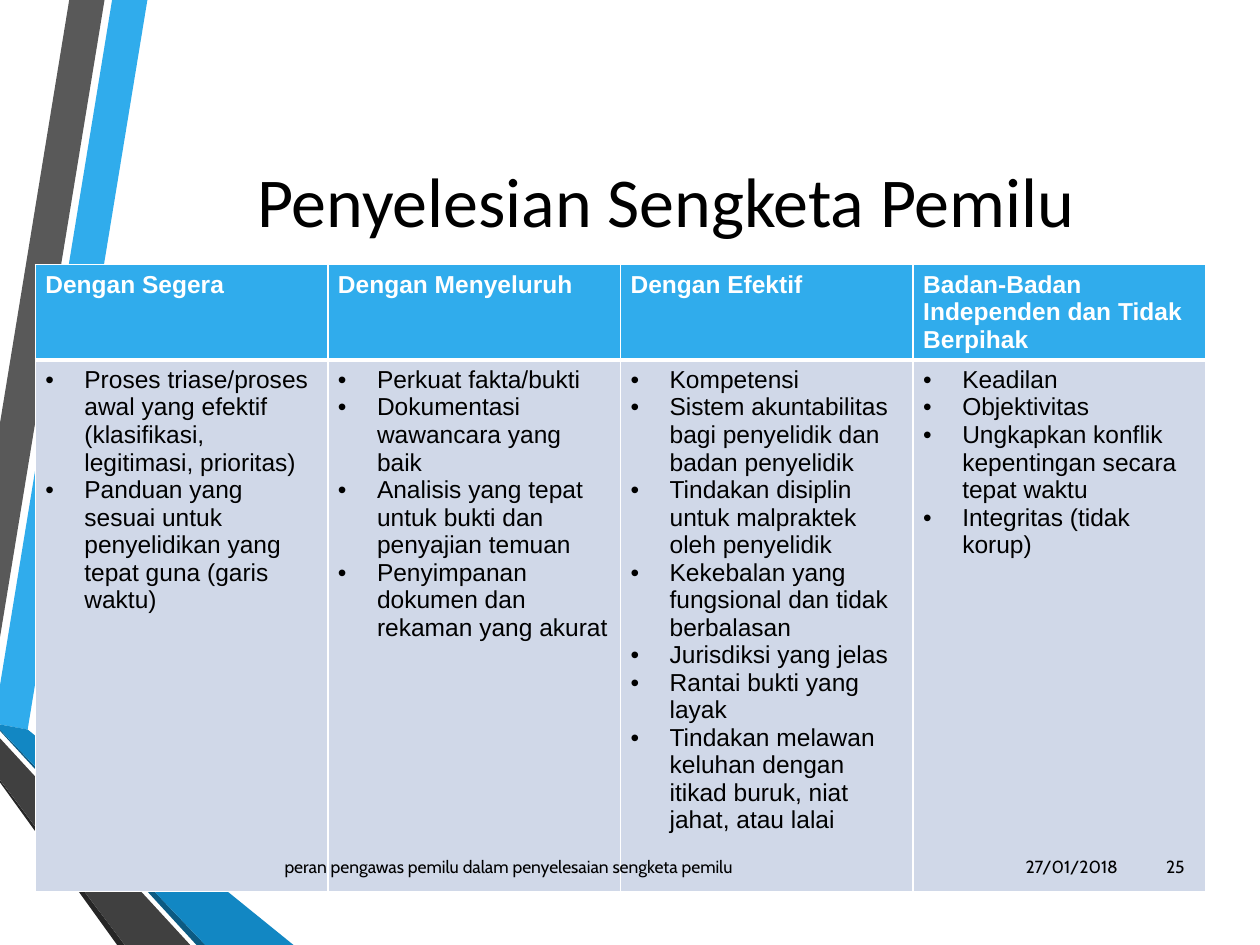
from dataclasses import dataclass

from lxml.etree import SubElement as Sub
from pptx import Presentation
from pptx.dml.color import RGBColor as Rgb
from pptx.enum.text import MSO_ANCHOR as Anchor, PP_ALIGN as Align
from pptx.oxml import parse_xml
from pptx.oxml.ns import nsdecls, qn
from pptx.util import Inches, Pt


@dataclass(frozen=True)
class Theme:
    """Colours, fonts and type sizes of the slide."""
    black: str = "000000"
    white: str = "FFFFFF"
    sky: str = "30ACEC"
    blue: str = "1287C3"
    navy: str = "0C5A82"
    gray: str = "595959"
    dark: str = "404040"
    coal: str = "262626"
    pale: str = "D0D8E8"
    head: str = "Calibri"
    body: str = "Arial"
    foot: str = "Cabin"
    big: int = 40
    mid: int = 14
    small: int = 10


THEME = Theme()

BANDS = [
    (THEME.sky, [(0, 5.44), (0, 5.75), (0.22, 5.79), (1.17, 0), (0.89, 0)]),
    (THEME.gray, [(0.83, 0), (0.55, 0), (0, 3.36), (0, 5.06)]),
    (THEME.coal, [(0, 6.19), (0, 6.21), (0.93, 7.5), (0.99, 7.5)]),
    (THEME.navy, [(0, 5.79), (0, 5.8), (1.56, 7.5), (1.63, 7.5)]),
    (THEME.blue, [(0, 5.79), (1.63, 7.5), (2.33, 7.5), (0.22, 5.79), (0, 5.75)]),
    (THEME.dark, [(0, 6.19), (0.99, 7.5), (1.51, 7.5), (0, 5.86)]),
]

COLUMNS = {
    "Dengan Segera": [
        "Proses triase/proses awal yang efektif (klasifikasi, legitimasi, prioritas)",
        "Panduan yang sesuai untuk penyelidikan yang tepat guna (garis waktu)",
    ],
    "Dengan Menyeluruh": [
        "Perkuat fakta/bukti",
        "Dokumentasi wawancara yang baik",
        "Analisis yang tepat untuk bukti dan penyajian temuan",
        "Penyimpanan dokumen dan rekaman yang akurat",
    ],
    "Dengan Efektif": [
        "Kompetensi",
        "Sistem akuntabilitas bagi penyelidik dan badan penyelidik",
        "Tindakan disiplin untuk malpraktek oleh penyelidik",
        "Kekebalan yang fungsional dan tidak berbalasan",
        "Jurisdiksi yang jelas",
        "Rantai bukti yang layak",
        "Tindakan melawan keluhan dengan itikad buruk, niat jahat, atau lalai",
    ],
    "Badan-Badan Independen dan Tidak Berpihak": [
        "Keadilan",
        "Objektivitas",
        "Ungkapkan konflik kepentingan secara tepat waktu",
        "Integritas (tidak korup)",
    ],
}

FOOTS = [
    ("27/01/2018", (8.03, 6.68, 0.94, 0.4), Align.RIGHT),
    ("peran pengawas pemilu dalam penyelesaian sengketa pemilu",
     (2.16, 6.68, 5.81, 0.4), Align.LEFT),
    ("25", (9.03, 6.68, 0.47, 0.4), Align.RIGHT),
]


def write(frame, lines, font=THEME.body, size=THEME.mid, color=THEME.black,
          bold=False, align=Align.LEFT, bullet=False):
    """Fill a text frame with one formatted paragraph per line."""
    for i, line in enumerate(lines):
        para = frame.add_paragraph() if i else frame.paragraphs[0]
        para.alignment = align
        run = para.add_run()
        run.text = line
        run.font.name, run.font.size, run.font.bold = font, Pt(size), bold
        run.font.color.rgb = Rgb.from_string(color)
        if bullet:
            props = para._p.get_or_add_pPr()
            props.set("marL", str(Inches(0.31)))
            props.set("indent", str(Inches(-0.31)))
            Sub(props, qn("a:buFont"), typeface=THEME.body)
            Sub(props, qn("a:buChar"), char="•")


class Deck:
    """Holds the style and the current slide."""

    def __init__(self, theme):
        """Open a presentation with one title slide."""
        self.theme = theme
        self.file = Presentation()
        self.file.slide_width, self.file.slide_height = Inches(10), Inches(7.5)
        self.slide = self.file.slides.add_slide(self.file.slide_layouts[5])

    def band(self, color, points):
        """Draw a filled polygon behind the title."""
        spots = [(Inches(x), Inches(y)) for x, y in points]
        pen = self.slide.shapes.build_freeform(*spots[0])
        pen.add_line_segments(spots[1:], close=True)
        shape = pen.convert_to_shape()
        shape.shadow.inherit = False
        shape.fill.solid()
        shape.fill.fore_color.rgb = Rgb.from_string(color)
        shape.line.fill.background()

    def title(self, text, box):
        """Move and fill the title placeholder."""
        shape = self.slide.shapes.title
        shape.left, shape.top, shape.width, shape.height = map(Inches, box)
        shape.text_frame.vertical_anchor = Anchor.MIDDLE
        write(shape.text_frame, [text], font=self.theme.head,
              size=self.theme.big, align=Align.CENTER)
        tree = self.slide.shapes._spTree
        tree.remove(shape._element)
        tree.append(shape._element)

    def label(self, text, box, align):
        """Add a small text box."""
        frame = self.slide.shapes.add_textbox(*map(Inches, box)).text_frame
        frame.word_wrap = True
        frame.vertical_anchor = Anchor.MIDDLE
        write(frame, [text], font=self.theme.foot, size=self.theme.small,
              align=align)

    def cell(self, cell, lines, fill, edges, **form):
        """Style one cell and fill it with text."""
        cell.margin_left = cell.margin_right = Inches(0.08)
        cell.margin_top = cell.margin_bottom = Inches(0.05)
        cell.fill.solid()
        cell.fill.fore_color.rgb = Rgb.from_string(fill)
        props = cell._tc.get_or_add_tcPr()
        for i, (side, width) in enumerate(zip("LRTB", edges)):
            props.insert(i, parse_xml(
                f'<a:ln{side} {nsdecls("a")} w="{Pt(width)}"><a:solidFill>'
                f'<a:srgbClr val="{self.theme.white}"/></a:solidFill></a:ln{side}>'))
        write(cell.text_frame, lines, **form)

    def table(self, data, box, rows):
        """Add a table with a heading and a bullet list per column."""
        grid = self.slide.shapes.add_table(
            len(rows), len(data), *map(Inches, box)).table
        for row, tall in zip(grid.rows, rows):
            row.height = Inches(tall)
        for col, (head, items) in enumerate(data.items()):
            self.cell(grid.cell(0, col), [head], self.theme.sky, (1, 1, 1, 3),
                      color=self.theme.white, bold=True)
            self.cell(grid.cell(1, col), items, self.theme.pale, (1, 1, 3, 1),
                      bullet=True)


def main():
    """Build and save the slide."""
    deck = Deck(THEME)
    for color, points in BANDS:
        deck.band(color, points)
    deck.title("Penyelesian Sengketa Pemilu", (1.07, 0.5, 8.43, 2.17))
    deck.table(COLUMNS, (0.28, 2.1, 9.29, 4.96), (0.74, 4.22))
    for text, box, align in FOOTS:
        deck.label(text, box, align)
    deck.file.save("out.pptx")


if __name__ == "__main__":
    main()
